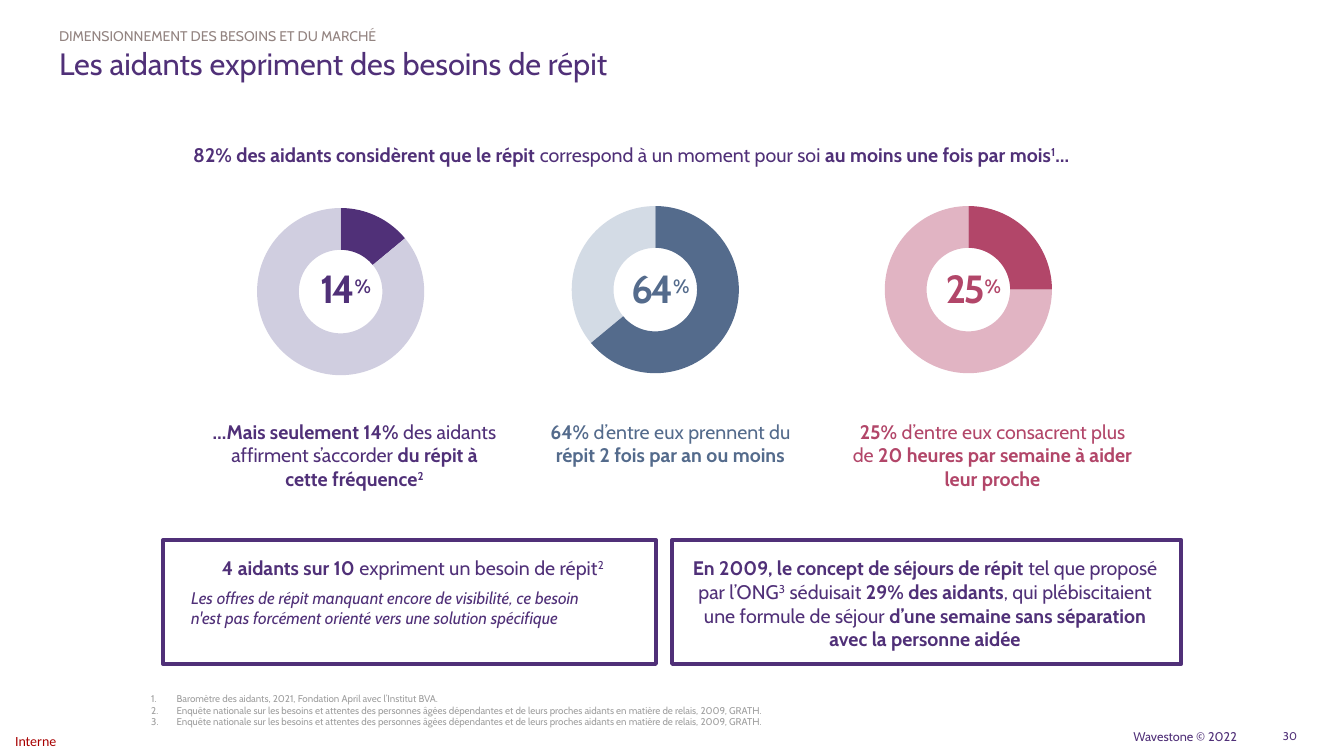
from lxml.etree import SubElement
from pptx import Presentation
from pptx.chart.data import CategoryChartData
from pptx.dml.color import RGBColor
from pptx.enum.chart import XL_CHART_TYPE
from pptx.enum.shapes import MSO_SHAPE
from pptx.enum.text import MSO_ANCHOR, PP_ALIGN
from pptx.oxml.ns import qn
from pptx.util import Cm, Pt

PURPLE = RGBColor(0x50, 0x30, 0x78)
LILAC = RGBColor(0xD0, 0xCE, 0xE0)
BLUE = RGBColor(0x54, 0x6B, 0x8C)
PALE_BLUE = RGBColor(0xB7, 0xC3, 0xD4)
RASPBERRY = RGBColor(0xB2, 0x46, 0x69)
PINK = RGBColor(0xE1, 0xB4, 0xC3)
TAUPE = RGBColor(0x93, 0x84, 0x81)
GREY = RGBColor(0x9F, 0x9F, 0x9F)
DARK_GREY = RGBColor(0x5F, 0x5F, 0x5F)
RED = RGBColor(0xA8, 0x00, 0x00)
WHITE = RGBColor(0xFF, 0xFF, 0xFF)

DEFAULT_INSETS = (0.25, 0.13, 0.25, 0.13)
HEADING_INSETS = (0.3, 0, 0.3, 0)
FOOTER_INSETS = (0, 0, 0, 0.33)
STUDY = ("Enquête nationale sur les besoins et attentes des personnes âgées dépendantes "
         "et de leurs proches aidants en matière de relais, 2009, GRATH.")
FOOTNOTES = ["Baromètre des aidants, 2021, Fondation April avec l’Institut BVA.", STUDY, STUDY]

RINGS = [
    dict(left=5.46, top=4.9, share=14, color=PURPLE, pale=LILAC, opacity=100,
         caption_left=5.11, caption_width=7.65,
         caption=[("…Mais seulement 14% ", "b"), ("des aidants affirment s’accorder ", ""),
                  ("du répit à cette fréquence", "b"), ("2", "b^")]),
    dict(left=13.39, top=4.85, share=64, color=BLUE, pale=PALE_BLUE, opacity=60,
         caption_left=13.39, caption_width=7.01,
         caption=[("64% ", "b"), ("d’entre eux prennent du ", ""),
                  ("répit 2 fois par an ou moins", "b")]),
    dict(left=21.28, top=4.85, share=25, color=RASPBERRY, pale=PINK, opacity=100,
         caption_left=21.23, caption_width=7.57,
         caption=[("25% ", "b"), ("d’entre eux consacrent plus de ", ""),
                  ("20 heures par semaine à aider leur proche", "b")]),
]


class SlideBuilder:
    """Draws styled elements on one slide, with lengths in centimetres."""

    def __init__(self, slide, font_name="Cabin"):
        self.slide = slide
        self.font_name = font_name

    def add_runs(self, paragraph, runs, size, color, font_name=None):
        for text, flags in runs:
            run = paragraph.add_run()
            run.text = text
            font = run.font
            font.name = font_name or self.font_name
            font.size = Pt(size)
            font.color.rgb = color
            font.bold = "b" in flags
            font.italic = "i" in flags
            if "^" in flags:
                run._r.get_or_add_rPr().set("baseline", "30000")

    def text_box(self, box, paragraphs, size, color, align=PP_ALIGN.LEFT, anchor=MSO_ANCHOR.TOP,
                 insets=DEFAULT_INSETS, numbered=False, wrap=True, font_name=None):
        shape = self.slide.shapes.add_textbox(*map(Cm, box))
        frame = shape.text_frame
        frame.word_wrap = wrap
        frame.vertical_anchor = anchor
        (frame.margin_left, frame.margin_top,
         frame.margin_right, frame.margin_bottom) = map(Cm, insets)
        for index, runs in enumerate(paragraphs):
            paragraph = frame.add_paragraph() if index else frame.paragraphs[0]
            paragraph.alignment = align
            if numbered:
                properties = paragraph._p.get_or_add_pPr()
                properties.set("marL", str(Cm(0.64)))
                properties.set("indent", str(-Cm(0.64)))
                SubElement(properties, qn("a:buFont"), typeface="+mj-lt")
                SubElement(properties, qn("a:buAutoNum"), type="arabicPeriod")
            self.add_runs(paragraph, runs, size, color, font_name)
        return shape

    def frame(self, box):
        shape = self.slide.shapes.add_shape(MSO_SHAPE.RECTANGLE, *map(Cm, box))
        shape.shadow.inherit = False
        shape.fill.solid()
        shape.fill.fore_color.rgb = WHITE
        shape.line.color.rgb = PURPLE
        shape.line.width = Pt(3)

    def doughnut(self, box, share, color, pale, opacity):
        data = CategoryChartData()
        data.categories = ["1", "2"]
        data.add_series("Series 1", (share, 100 - share))
        chart = self.slide.shapes.add_chart(XL_CHART_TYPE.DOUGHNUT, *map(Cm, box), data).chart
        chart.has_legend = False
        chart.has_title = False
        chart.font.name = self.font_name
        chart.font.size = Pt(10)
        chart.font.color.rgb = DARK_GREY
        plot = chart.plots[0]
        plot.vary_by_categories = False
        plot._element.find(qn("c:holeSize")).set("val", "84")
        for index, point_color in enumerate((color, pale)):
            point = plot.series[0].points[index]
            point.format.fill.solid()
            point.format.fill.fore_color.rgb = point_color
            point.format.line.fill.background()
        if opacity < 100:
            fill_color = point._element.findall(".//" + qn("a:srgbClr"))[-1]
            SubElement(fill_color, qn("a:alpha"), val=str(opacity * 1000))
        plot_area = plot._element.getparent()
        layout = plot_area.find(qn("c:layout"))
        if layout is None:
            layout = SubElement(plot_area, qn("c:layout"))
            plot_area.insert(0, layout)
        manual = SubElement(layout, qn("c:manualLayout"))
        for tag, value in (("layoutTarget", "inner"), ("xMode", "edge"), ("yMode", "edge"),
                           ("x", "0.16"), ("y", "0.07"), ("w", "0.68"), ("h", "0.86")):
            SubElement(manual, qn("c:" + tag), val=value)

    def ring(self, left, top, share, color, pale, opacity, caption_left, caption_width, caption):
        self.doughnut((left, top, 6.25, 4.9), share, color, pale, opacity)
        label = self.text_box((left + 2.11, 6.65, 2.03, 1.19), [[(str(share), "b"), ("%", "b^")]],
                              28, color, PP_ALIGN.CENTER, MSO_ANCHOR.MIDDLE, (0.25, 0, 0, 0),
                              wrap=False)
        number, percent = label.text_frame.paragraphs[0].runs
        percent.font.size = Pt(24)
        for run in (number, percent):
            run._r.get_or_add_rPr().set("spc", "-200")
        self.text_box((caption_left, 10.44, caption_width, 2.06), [caption], 14, color,
                      PP_ALIGN.CENTER)


def main():
    presentation = Presentation()
    presentation.slide_width = Cm(33.87)
    presentation.slide_height = Cm(19.05)
    builder = SlideBuilder(presentation.slides.add_slide(presentation.slide_layouts[6]))

    builder.text_box((27.56, 18.36, 3.61, 0.74), [[("Wavestone © 2022", "")]], 9, PURPLE,
                     PP_ALIGN.RIGHT, insets=FOOTER_INSETS)
    builder.text_box((31.47, 18.36, 1.22, 0.69), [[("30", "")]], 8, PURPLE,
                     PP_ALIGN.RIGHT, MSO_ANCHOR.MIDDLE, FOOTER_INSETS)
    builder.text_box((0, 18.31, 1.8, 0.74), [[("Interne", "")]], 10, RED,
                     anchor=MSO_ANCHOR.MIDDLE, insets=(0.38, 0, 0, 0), font_name="Calibri")
    builder.text_box((1.19, 1.12, 31.5, 2.59), [[("Les aidants expriment des besoins de répit", "")]],
                     22, PURPLE, insets=HEADING_INSETS)
    builder.text_box((1.19, 0.41, 31.5, 0.71), [[("DIMENSIONNEMENT DES BESOINS ET DU MARCHÉ", "")]],
                     10, TAUPE, PP_ALIGN.JUSTIFY, MSO_ANCHOR.BOTTOM, HEADING_INSETS)
    builder.text_box((3.56, 17.32, 20.09, 1.14), [[(note, "")] for note in FOOTNOTES], 7, GREY,
                     numbered=True)
    builder.text_box((4.62, 3.48, 25.6, 1.45), [[
        ("82% des aidants considèrent que le répit ", "b"), ("correspond à un moment pour soi ", ""),
        ("au moins une fois par mois", "b"), ("1", "b^"), ("…", "b")]], 14, PURPLE)

    for ring in RINGS:
        builder.ring(**ring)

    builder.frame((4.11, 13.61, 12.42, 3.12))
    builder.text_box((4.27, 13.87, 12.27, 0.86), [[
        ("4 aidants sur 10 ", "b"), ("expriment un besoin de répit", ""), ("2", "^")]],
        14, PURPLE, PP_ALIGN.CENTER)
    builder.text_box((4.57, 14.68, 10.62, 1.8), [[
        ("Les offres de répit manquant encore de visibilité, ce besoin n'est pas forcément "
         "orienté vers une solution spécifique", "i")]], 12, PURPLE)
    builder.frame((16.94, 13.61, 12.83, 3.12))
    builder.text_box((16.99, 13.89, 12.65, 2.74), [[
        ("En 2009, le concept de séjours de répit", "b"), (" tel que proposé par l’ONG", ""),
        ("3", "^"), (" séduisait ", ""), ("29% des aidants", "b"),
        (", qui plébiscitaient une formule de séjour ", ""),
        ("d’une semaine sans séparation avec la personne aidée", "b")]],
        14, PURPLE, PP_ALIGN.CENTER)

    presentation.save("out.pptx")


if __name__ == "__main__":
    main()
